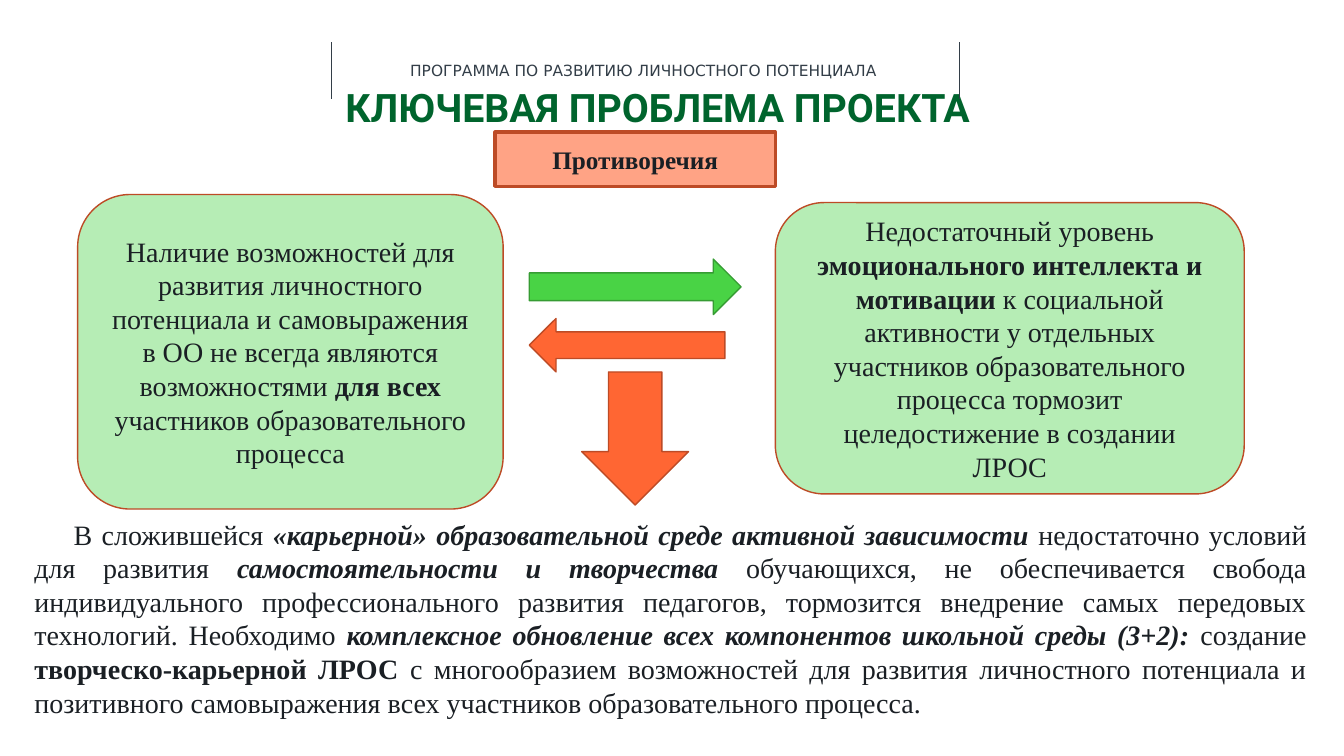
from pptx import Presentation
from pptx.dml.color import RGBColor
from pptx.enum import shapes, text
from pptx.oxml import ns, xmlchemy as xc
from pptx.util import Emu, Pt

PX = 9144  # 100 px to the inch
INK, RUST, MINT, FLAME = "1A1F24", "BD4B26", "B6EDB5", "FF6633"
SERIF = "Times New Roman"
KIND = shapes.MSO_SHAPE
MID = text.PP_ALIGN.CENTER


def px(*nums):
    return [Emu(n * PX) for n in nums]


def hue(code):
    return RGBColor.from_string(code)


def put(obj, **vals):
    for key, val in vals.items():
        setattr(obj, key, val)


def place(shape, box):
    put(shape, **dict(zip(("left", "top", "width", "height"), px(*box))))


def write(para, runs, size, face=SERIF, color=INK):
    """Add (words, style) runs; b is bold, i italic, a newline a line break."""
    for words, style in runs:
        for n, part in enumerate(words.split("\n")):
            if n:
                para.add_line_break()
            run = para.add_run()
            run.text = part
            put(run.font, size=Pt(size), name=face,
                bold="b" in style, italic="i" in style)
            run.font.color.rgb = hue(color)


def block(slide, kind, box, fill, line, width=1):
    shape = slide.shapes.add_shape(kind, *px(*box))
    shape.shadow.inherit = False
    shape.fill.solid()
    shape.fill.fore_color.rgb = hue(fill)
    shape.line.color.rgb = hue(line)
    shape.line.width = Pt(width)
    return shape


def card(slide, kind, box, fill, paras, size=20, width=1):
    frame = block(slide, kind, box, fill, RUST, width).text_frame
    put(frame, word_wrap=True, vertical_anchor=text.MSO_ANCHOR.MIDDLE)
    for n, runs in enumerate(paras):
        para = frame.add_paragraph() if n else frame.paragraphs[0]
        para.alignment = MID
        write(para, runs, size)


def header(slide, box):
    """Place the programme name between two rules, with the title below."""
    x, y, w, h = box
    for side in (x, x + w):
        rule = slide.shapes.add_connector(
            shapes.MSO_CONNECTOR.STRAIGHT, *px(side, y, side, y + h))
        rule.line.color.rgb = hue("333E48")
        rule.line.width = Pt(0.5)
        rule._element.spPr.append(xc.OxmlElement("a:effectLst"))
    label = slide.shapes.add_textbox(*px(x + 68, y + 14, 487, 29)).text_frame
    label.word_wrap = False
    write(label.paragraphs[0],
          [("ПРОГРАММА ПО РАЗВИТИЮ ЛИЧНОСТНОГО ПОТЕНЦИАЛА", "")],
          11, "DejaVu Sans", "333E48")

    title = slide.shapes.title
    place(title, (0, y + 46, 1304, 42))
    frame = title.text_frame
    put(frame, margin_left=0, margin_right=0, margin_top=0, margin_bottom=0,
        word_wrap=True, auto_size=text.MSO_AUTO_SIZE.NONE,
        vertical_anchor=text.MSO_ANCHOR.TOP)
    put(frame.paragraphs[0], alignment=MID, line_spacing=0.9)
    write(frame.paragraphs[0], [("КЛЮЧЕВАЯ ПРОБЛЕМА ПРОЕКТА", "b")],
          28, "Roboto", "00642D")


def clash(slide, box):
    """Place the two opposed cards, their heading and the arrows."""
    x, y, w, h = box
    card(slide, KIND.ROUNDED_RECTANGLE, (x, y + 62, 422, 312), MINT, [
        [("Наличие возможностей для развития личностного потенциала и "
          "самовыражения в ОО не всегда являются возможностями ", ""),
         ("для всех", "b")],
        [("участников образовательного процесса", "")]])
    card(slide, KIND.ROUNDED_RECTANGLE, (x + w - 465, y + 70, 465, 289), MINT, [
        [("Недостаточный уровень ", ""),
         ("эмоционального интеллекта и мотивации ", "b"),
         ("к социальной активности у отдельных участников образовательного "
          "процесса тормозит целедостижение в создании\nЛРОС", "")]])
    card(slide, KIND.RECTANGLE, (x + 414, y, 278, 54), "FFA385",
         [[("Противоречия", "b")]], 18, 2.25)
    mid = x + 448
    block(slide, KIND.RIGHT_ARROW, (mid, y + 126, 210, 55), "49D345", "369C33")
    block(slide, KIND.LEFT_ARROW, (mid, y + 185, 194, 53), FLAME, RUST)
    block(slide, KIND.DOWN_ARROW, (mid + 52, y + 238, 106, h - 242), FLAME, RUST)


def summary(slide, box):
    body = slide.placeholders[1]
    place(body, box)
    frame = body.text_frame
    edge, = px(7)
    put(frame, margin_left=0, margin_right=0, margin_top=edge,
        margin_bottom=edge, word_wrap=True,
        auto_size=text.MSO_AUTO_SIZE.NONE,
        vertical_anchor=text.MSO_ANCHOR.TOP)
    para = frame.paragraphs[0]
    props = para._p.get_or_add_pPr()
    props.set("marL", "0")
    props.set("indent", str(39 * PX))
    props.append(props.makeelement(ns.qn("a:buNone"), {}))
    put(para, alignment=text.PP_ALIGN.JUSTIFY, space_before=Pt(0))
    write(para, [
        ("В сложившейся ", ""),
        ("«карьерной» образовательной среде активной зависимости ", "bi"),
        ("недостаточно условий для развития ", ""),
        ("самостоятельности и творчества ", "bi"),
        ("обучающихся, не обеспечивается свобода индивидуального "
         "профессионального развития педагогов, тормозится внедрение самых "
         "передовых технологий. Необходимо ", ""),
        ("комплексное обновление всех компонентов школьной среды (3+2): ", "bi"),
        ("создание ", ""),
        ("творческо-карьерной ЛРОС ", "b"),
        ("с многообразием возможностей для развития личностного потенциала и "
         "позитивного самовыражения всех участников образовательного "
         "процесса.", "")], 20)


def main():
    deck = Presentation()
    deck.slide_width, deck.slide_height = px(1333, 750)
    slide = deck.slides.add_slide(deck.slide_layouts[1])
    header(slide, (329, 42, 623, 56))
    summary(slide, (34, 506, 1262, 213))
    clash(slide, (77, 131, 1157, 374))
    deck.save("out.pptx")


if __name__ == "__main__":
    main()
